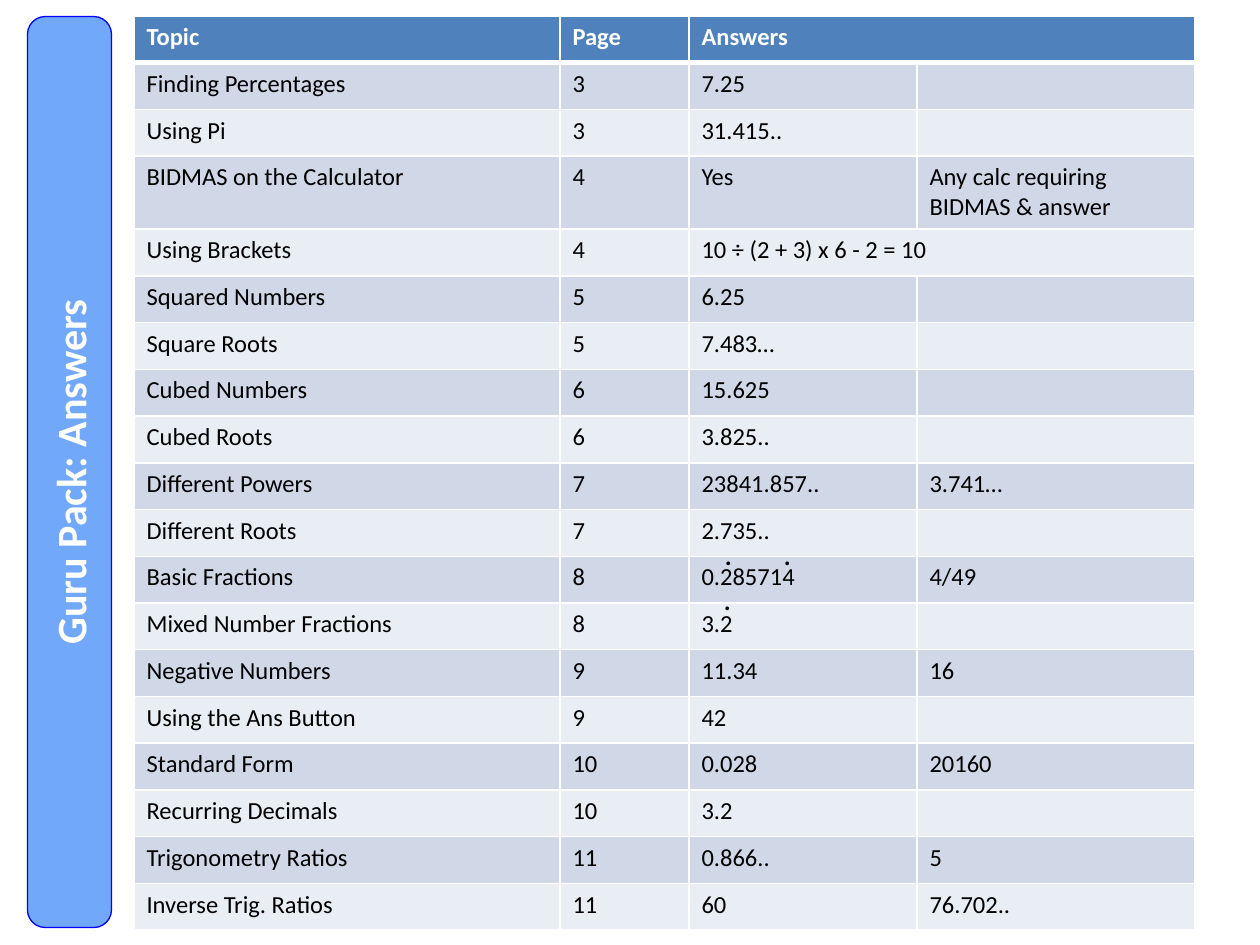
from lxml import etree
from pptx import Presentation
from pptx.dml.color import RGBColor
from pptx.enum.shapes import MSO_SHAPE
from pptx.enum.text import MSO_ANCHOR, PP_ALIGN
from pptx.oxml.ns import qn
from pptx.util import Emu, Pt

ROUNDED = MSO_SHAPE.ROUNDED_RECTANGLE
MIDDLE = MSO_ANCHOR.MIDDLE
LEFT, CENTER = PP_ALIGN.LEFT, PP_ALIGN.CENTER
EMU_PER_PX = 914400 // 126
FONT = "Calibri"
COLORS = {
    "header": "4F81BD",
    "band_dark": "D0D8E8",
    "band_light": "E9EDF4",
    "bar": "71A8F9",
    "bar_line": "0000FF",
    "white": "FFFFFF",
    "black": "000000",
}
COLUMN_WIDTHS = [426, 129, 228, 278]
TABLE_LEFT, TABLE_TOP, TABLE_HEIGHT = 134, 16, 915
TALL_ROW, TALL_HEIGHT = 3, 73
ANSWER_ROWS = [
    ("Topic", "Page", "Answers"),
    ("Finding Percentages", "3", "7.25", ""),
    ("Using Pi", "3", "31.415..", ""),
    ("BIDMAS on the Calculator", "4", "Yes", "Any calc requiring BIDMAS & answer"),
    ("Using Brackets", "4", "10 ÷ (2 + 3) x 6 - 2 = 10"),
    ("Squared Numbers", "5", "6.25", ""),
    ("Square Roots", "5", "7.483…", ""),
    ("Cubed Numbers", "6", "15.625", ""),
    ("Cubed Roots", "6", "3.825..", ""),
    ("Different Powers", "7", "23841.857..", "3.741…"),
    ("Different Roots", "7", "2.735..", ""),
    ("Basic Fractions", "8", "0.285714", "4/49"),
    ("Mixed Number Fractions", "8", "3.2", ""),
    ("Negative Numbers", "9", "11.34", "16"),
    ("Using the Ans Button", "9", "42", ""),
    ("Standard Form", "10", "0.028", "20160"),
    ("Recurring Decimals", "10", "3.2", ""),
    ("Trigonometry Ratios", "11", "0.866..", "5"),
    ("Inverse Trig. Ratios", "11", "60", "76.702.."),
]
RECURRING_DOTS = [(712, 528), (771, 528), (711, 573)]


def px(value):
    return Emu(value * EMU_PER_PX)


def color(name):
    return RGBColor.from_string(COLORS[name])


def write(frame, text, size=14, fill="black", bold=False, align=LEFT):
    paragraph = frame.paragraphs[0]
    paragraph.alignment = align
    if not text:
        paragraph._p.get_or_add_endParaRPr().set("sz", str(size * 100))
        return
    run = paragraph.add_run()
    run.text = text
    run.font.name = FONT
    run.font.size = Pt(size)
    run.font.bold = bold
    run.font.color.rgb = color(fill)


def add_borders(cell, bottom_width):
    properties = cell._tc.get_or_add_tcPr()
    widths = {"a:lnL": 1, "a:lnR": 1, "a:lnT": 1, "a:lnB": bottom_width}
    for position, (tag, width) in enumerate(widths.items()):
        line = etree.Element(qn(tag), w=str(Pt(width)))
        fill = etree.SubElement(line, qn("a:solidFill"))
        etree.SubElement(fill, qn("a:srgbClr"), val=COLORS["white"])
        properties.insert(position, line)


def add_answer_table(slide):
    row_count = len(ANSWER_ROWS)
    table = slide.shapes.add_table(
        row_count, len(COLUMN_WIDTHS), px(TABLE_LEFT), px(TABLE_TOP),
        px(sum(COLUMN_WIDTHS)), px(TABLE_HEIGHT)).table
    for column, width in zip(table.columns, COLUMN_WIDTHS):
        column.width = px(width)
    row_height = px(TABLE_HEIGHT - TALL_HEIGHT) // (row_count - 1)
    for index, texts in enumerate(ANSWER_ROWS):
        is_header = index == 0
        band = "header" if is_header else ("band_light", "band_dark")[index % 2]
        table.rows[index].height = px(TALL_HEIGHT) if index == TALL_ROW else row_height
        for column in range(len(COLUMN_WIDTHS)):
            cell = table.cell(index, column)
            cell.fill.solid()
            cell.fill.fore_color.rgb = color(band)
            add_borders(cell, 3 if is_header else 1)
            write(cell.text_frame, texts[column] if column < len(texts) else "",
                  fill="white" if is_header else "black", bold=is_header)
        if len(texts) < len(COLUMN_WIDTHS):
            table.cell(index, len(texts) - 1).merge(
                table.cell(index, len(COLUMN_WIDTHS) - 1))


def add_recurring_dot(slide, left, top):
    box = slide.shapes.add_textbox(px(left), px(top), px(134), px(50))
    box.text_frame.word_wrap = True
    write(box.text_frame, ".", size=18)


def add_title_bar(slide, text):
    bar = slide.shapes.add_shape(ROUNDED, px(-386), px(430), px(911), px(84))
    bar.shadow.inherit = False
    bar.rotation = 270
    bar.adjustments[0] = 0.21
    bar.fill.solid()
    bar.fill.fore_color.rgb = color("bar")
    bar.line.color.rgb = color("bar_line")
    bar.line.width = Pt(0.75)
    bar.text_frame.word_wrap = True
    bar.text_frame.vertical_anchor = MIDDLE
    write(bar.text_frame, text, size=24, fill="white", bold=True, align=CENTER)


def main():
    presentation = Presentation()
    presentation.slide_width = px(1260)
    presentation.slide_height = px(945)
    slide = presentation.slides.add_slide(presentation.slide_layouts[6])
    add_answer_table(slide)
    for left, top in RECURRING_DOTS:
        add_recurring_dot(slide, left, top)
    add_title_bar(slide, "Guru Pack: Answers")
    presentation.save("out.pptx")


if __name__ == "__main__":
    main()
